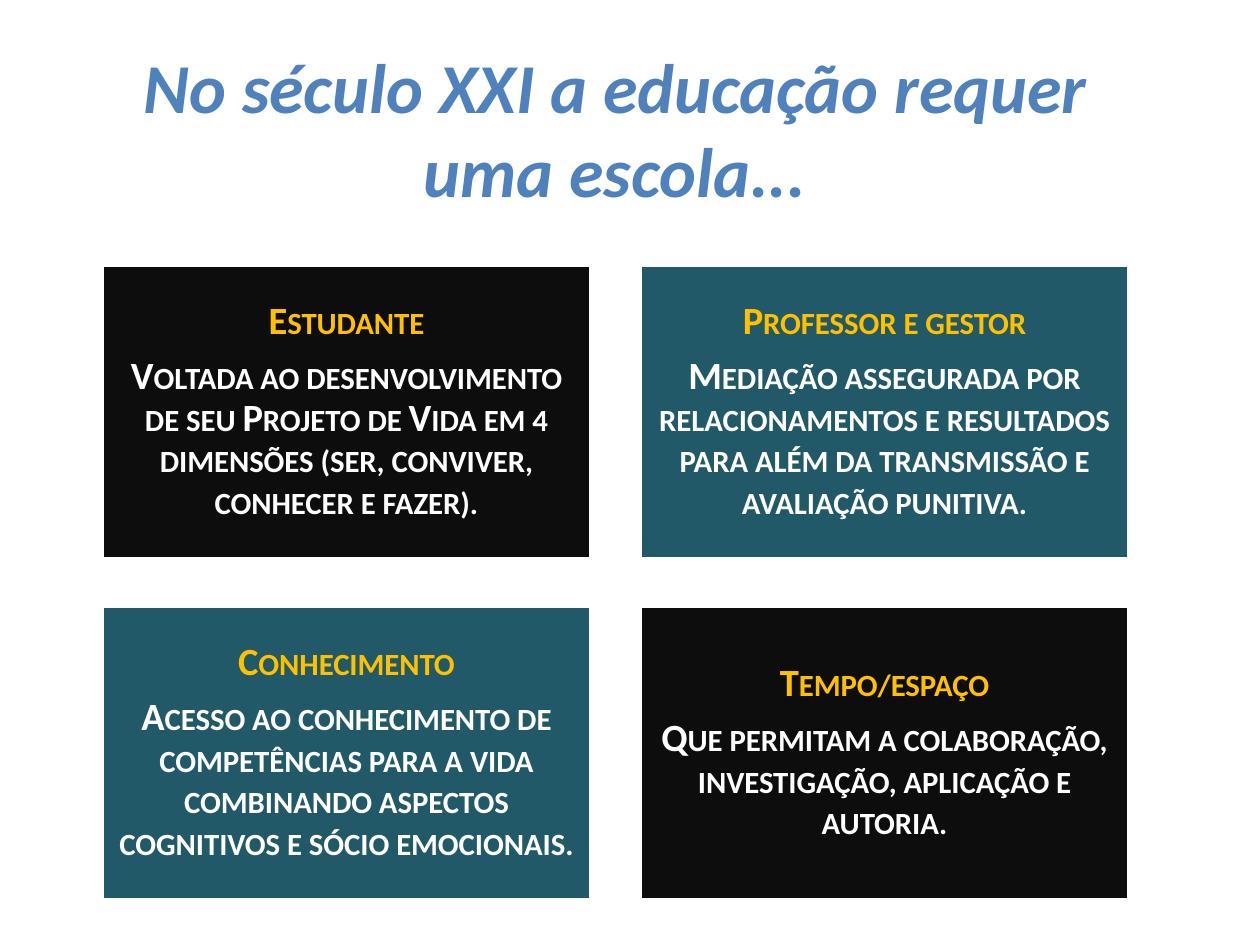
from dataclasses import dataclass

from pptx import Presentation
from pptx.dml.color import RGBColor
from pptx.enum.shapes import MSO_SHAPE as Shape
from pptx.enum.text import MSO_ANCHOR as Anchor, MSO_AUTO_SIZE as AutoSize, PP_ALIGN as Align
from pptx.util import Emu, Pt


@dataclass(frozen=True)
class Theme:
    font: str = "Calibri"
    title: RGBColor = RGBColor(0x4F, 0x81, 0xBD)
    heading: RGBColor = RGBColor(0xFF, 0xC0, 0x00)
    white: RGBColor = RGBColor(0xFF, 0xFF, 0xFF)
    dark: RGBColor = RGBColor(0x0D, 0x0D, 0x0D)
    teal: RGBColor = RGBColor(0x21, 0x59, 0x68)
    title_size: Pt = Pt(40)
    tile_size: Pt = Pt(22)
    border: Pt = Pt(2)
    after: Pt = Pt(7.7)


THEME = Theme()
TITLE = "No século XXI a educação requer uma escola..."
TILES = [
    ("Estudante", "Voltada ao desenvolvimento de seu Projeto de Vida em 4 "
     "dimensões (ser, conviver, conhecer e fazer)."),
    ("Professor e gestor", "Mediação assegurada por relacionamentos e resultados "
     "para além da transmissão e avaliação punitiva."),
    ("Conhecimento", "Acesso ao conhecimento de competências para a vida "
     "combinando aspectos cognitivos e sócio emocionais."),
    ("Tempo/espaço", "Que permitam a colaboração, investigação, aplicação e autoria."),
]
GRID_LEFT, GRID_TOP = 102, 265
TILE_WIDTH, TILE_HEIGHT = 489, 294
COLUMN_STEP, ROW_STEP = 538, 341
INSET = 11


def px(length):
    return Emu(round(length * 914400 / 126))


def apply(target, values):
    for name, value in values.items():
        setattr(target, name, value)


def add_run(paragraph, wording, color, **values):
    run = paragraph.add_run()
    run.text = wording
    apply(run.font, {"name": THEME.font, "bold": True, **values})
    run.font.color.rgb = color
    return run


def add_title(slide):
    title = slide.shapes.title
    apply(title, {"left": px(84), "top": px(37), "width": px(1062), "height": px(183)})
    apply(title.text_frame, {"vertical_anchor": Anchor.TOP, "word_wrap": True,
                             "auto_size": AutoSize.SHAPE_TO_FIT_TEXT})
    line = title.text_frame.paragraphs[0]
    line.alignment = Align.CENTER
    add_run(line, TITLE, THEME.title, size=THEME.title_size, italic=True)


def add_tile(slide, index, heading, description):
    row, column = divmod(index, 2)
    tile = slide.shapes.add_shape(
        Shape.RECTANGLE, px(GRID_LEFT + column * COLUMN_STEP),
        px(GRID_TOP + row * ROW_STEP), px(TILE_WIDTH), px(TILE_HEIGHT))
    tile.shadow.inherit = False
    tile.fill.solid()
    tile.fill.fore_color.rgb = THEME.dark if row == column else THEME.teal
    tile.line.color.rgb = THEME.white
    tile.line.width = THEME.border

    frame = tile.text_frame
    margins = {f"margin_{side}": px(INSET) for side in ("left", "top", "right", "bottom")}
    apply(frame, {"word_wrap": True, "vertical_anchor": Anchor.MIDDLE, **margins})
    wordings = ((heading, THEME.heading), (description, THEME.white))
    for position, (wording, color) in enumerate(wordings):
        paragraph = frame.add_paragraph() if position else frame.paragraphs[0]
        apply(paragraph, {"alignment": Align.CENTER, "line_spacing": 0.9,
                          "space_after": THEME.after})
        run = add_run(paragraph, wording, color, size=THEME.tile_size)
        run._r.get_or_add_rPr().set("cap", "small")


def main():
    deck = Presentation()
    apply(deck, {"slide_width": px(1260), "slide_height": px(945)})
    slide = deck.slides.add_slide(deck.slide_layouts.get_by_name("Title Only"))
    add_title(slide)
    for index, (heading, description) in enumerate(TILES):
        add_tile(slide, index, heading, description)
    deck.save("out.pptx")


if __name__ == "__main__":
    main()
